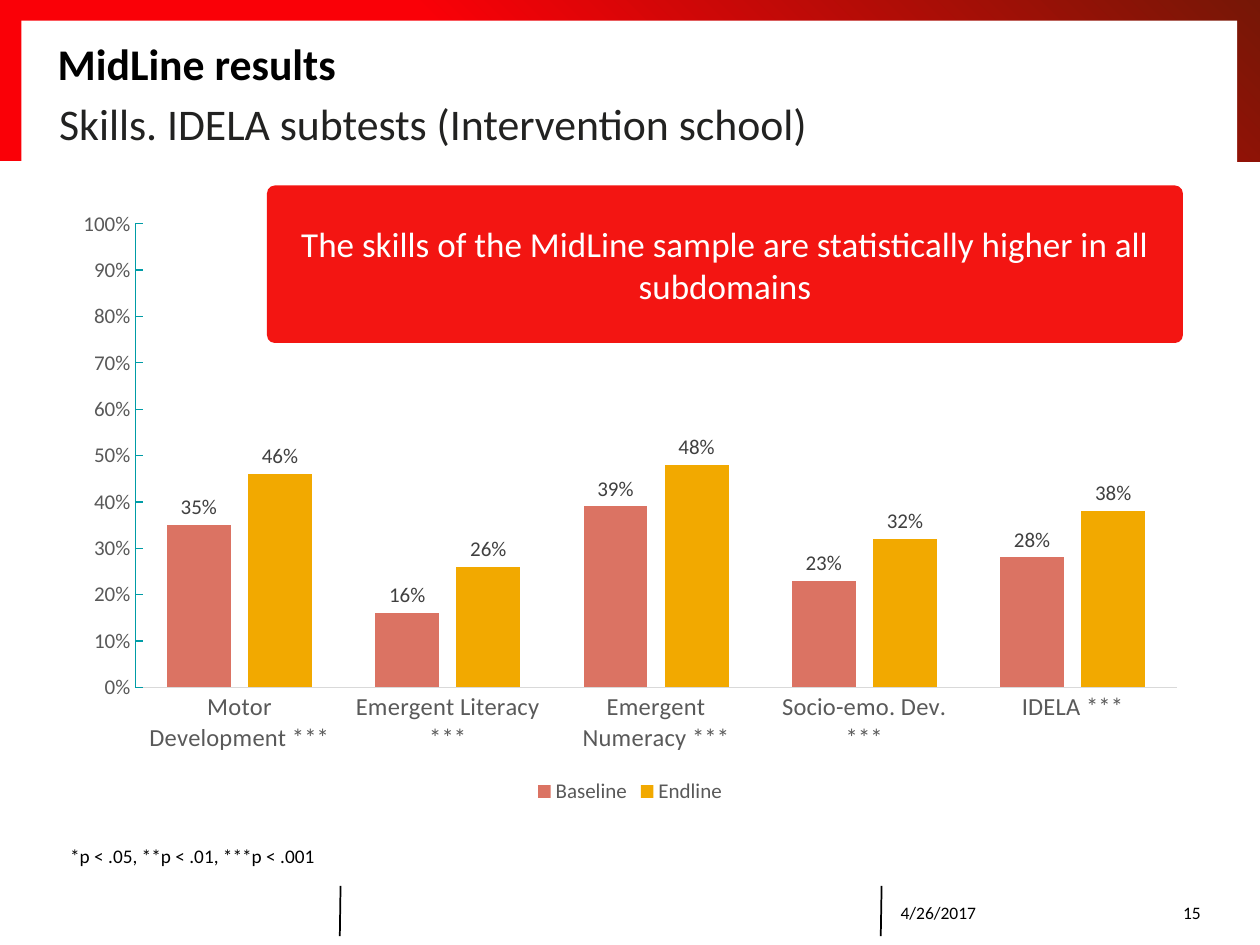
"""Build the MidLine results slide with a chart of skills by IDELA subtest."""
from dataclasses import dataclass, field
from typing import Any

from lxml.etree import SubElement
from pptx import Presentation
from pptx.chart.data import CategoryChartData
from pptx.dml.color import RGBColor
from pptx.enum.chart import XL_CHART_TYPE, XL_LABEL_POSITION, XL_LEGEND_POSITION, XL_TICK_MARK
from pptx.enum.shapes import MSO_CONNECTOR, MSO_SHAPE
from pptx.enum.text import MSO_ANCHOR, PP_ALIGN
from pptx.oxml.ns import qn
from pptx.util import Pt

FONT = "Calibri"
CATEGORIES = ["Motor Development ***", "Emergent Literacy ***", "Emergent Numeracy ***",
              "Socio-emo. Dev. ***", "IDELA ***"]


@dataclass
class Label:
    """A text box with its place, type size and format values."""
    text: str
    place: tuple[float, float, float, float]
    size: float
    color: str = "000000"
    bold: bool = False
    align: PP_ALIGN = PP_ALIGN.LEFT
    frame: dict[str, Any] = field(default_factory=dict)


@dataclass
class Bars:
    """One series of the chart."""
    name: str
    values: tuple[float, ...]
    color: str


NO_INSET = dict.fromkeys(("margin_left", "margin_top", "margin_right", "margin_bottom"), 0)
MIDDLE = {"vertical_anchor": MSO_ANCHOR.MIDDLE}
LABELS = [
    Label("MidLine results", (33, 16, 652, 40), 25, bold=True, frame=NO_INSET | MIDDLE),
    Label("4/26/2017", (507.6, 507, 124.5, 29), 10, frame=MIDDLE),
    Label("15", (632, 507, 61.2, 29), 10, align=PP_ALIGN.RIGHT, frame=MIDDLE),
    Label("Skills. IDELA subtests (Intervention school)", (33.8, 55.5, 652, 29), 25,
          "222221", frame=NO_INSET),
    Label("*p < .05, **p < .01, ***p < .001", (33, 479, 157, 21), 11,
          frame={"word_wrap": False}),
]
CALLOUT = Label("The skills of the MidLine sample are statistically higher in all subdomains",
                (152.6, 106, 523.4, 90), 20, "FFFFFF", align=PP_ALIGN.CENTER, frame=MIDDLE)
SERIES = [
    Bars("Baseline", (0.35, 0.16, 0.39, 0.23, 0.28), "DB7363"),
    Bars("Endline", (0.46, 0.26, 0.48, 0.32, 0.38), "F2A900"),
]


def rgb(code: str) -> RGBColor:
    """Turn a hex string into a colour."""
    return RGBColor.from_string(code)


def points(place: tuple[float, ...]) -> list[Pt]:
    """Turn numbers into point lengths."""
    return [Pt(value) for value in place]


def apply(target: Any, values: dict[str, Any]) -> None:
    """Set each named attribute on the target."""
    for name, value in values.items():
        setattr(target, name, value)


def style_font(font: Any, size: float, color: str, bold: bool = False) -> None:
    """Give a font its face, size, weight and colour."""
    apply(font, {"name": FONT, "size": Pt(size), "bold": bold})
    font.color.rgb = rgb(color)


def write(box: Any, label: Label) -> None:
    """Fill a box with the text of a label."""
    frame = box.text_frame
    apply(frame, {"word_wrap": True} | label.frame)
    para = frame.paragraphs[0]
    para.alignment = label.align
    span = para.add_run()
    span.text = label.text
    style_font(span.font, label.size, label.color, label.bold)


def add_panel(page: Any, kind: MSO_SHAPE, place: tuple[float, ...], color: str) -> Any:
    """Add a plain filled shape without outline or shadow."""
    panel = page.shapes.add_shape(kind, *points(place))
    panel.shadow.inherit = False
    panel.fill.solid()
    panel.fill.fore_color.rgb = rgb(color)
    panel.line.fill.background()
    return panel


def add_banner(page: Any) -> None:
    """Add the red gradient band and the white panel over it."""
    band = add_panel(page, MSO_SHAPE.RECTANGLE, (0, 0, 720, 92.2), "FA0007")
    band.fill.gradient()
    band.fill.gradient_angle = 45
    for stop, position, color in zip(band.fill.gradient_stops, (0.4, 1), ("FA0007", "761706")):
        stop.position = position
        stop.color.rgb = rgb(color)
    add_panel(page, MSO_SHAPE.RECTANGLE, (12.2, 11.8, 694.8, 85), "FFFFFF")


def add_divider(page: Any, top_x: float, bottom_x: float) -> None:
    """Add a thin black divider in the footer."""
    divider = page.shapes.add_connector(MSO_CONNECTOR.STRAIGHT,
                                        *points((top_x, 506.2, bottom_x, 535)))
    divider.line.color.rgb = rgb("000000")
    divider.line.width = Pt(1)
    SubElement(divider._element.spPr, qn("a:effectLst"))


def style_axis(axis: Any, size: float, color: str, values: dict[str, Any]) -> None:
    """Give an axis its text, line and format values."""
    apply(axis, {"has_major_gridlines": False, "minor_tick_mark": XL_TICK_MARK.NONE} | values)
    style_font(axis.tick_labels.font, size, "595959")
    axis.format.line.color.rgb = rgb(color)
    axis.format.line.width = Pt(0.75)


def add_skills_chart(page: Any) -> None:
    """Add the clustered columns of baseline and endline skills."""
    data = CategoryChartData(number_format="0%")
    data.categories = CATEGORIES
    for bars in SERIES:
        data.add_series(bars.name, bars.values)
    chart = page.shapes.add_chart(XL_CHART_TYPE.COLUMN_CLUSTERED,
                                  *points((34.6, 113.8, 650.9, 348.5)), data).chart
    style_font(chart.font, 10, "000000")
    apply(chart, {"has_title": False, "has_legend": True})
    apply(chart.legend, {"position": XL_LEGEND_POSITION.BOTTOM, "include_in_layout": False})
    style_font(chart.legend.font, 12, "595959")
    style_axis(chart.category_axis, 14, "D9D9D9", {"major_tick_mark": XL_TICK_MARK.NONE})
    style_axis(chart.value_axis, 12, "009CA6", {
        "major_tick_mark": XL_TICK_MARK.INSIDE, "minimum_scale": 0,
        "maximum_scale": 1, "major_unit": 0.1})
    apply(chart.value_axis.tick_labels, {"number_format": "0%", "number_format_is_linked": False})
    plot = chart.plots[0]
    apply(plot, {"gap_width": 99, "overlap": -27, "vary_by_categories": False})
    for series, bars in zip(plot.series, SERIES):
        series.format.fill.solid()
        series.format.fill.fore_color.rgb = rgb(bars.color)
        apply(series.data_labels, {
            "show_value": True, "number_format": "0%", "number_format_is_linked": False,
            "position": XL_LABEL_POSITION.OUTSIDE_END})
        style_font(series.data_labels.font, 12, "404040")


def main() -> None:
    """Build the slide and save the deck."""
    deck = Presentation()
    apply(deck, {"slide_width": Pt(720), "slide_height": Pt(540)})
    page = deck.slides.add_slide(deck.slide_layouts[6])
    add_banner(page)
    for top_x, bottom_x in ((194.6, 194.2), (503.8, 503.3)):
        add_divider(page, top_x, bottom_x)
    for label in LABELS:
        write(page.shapes.add_textbox(*points(label.place)), label)
    callout = add_panel(page, MSO_SHAPE.ROUNDED_RECTANGLE, CALLOUT.place, "F31512")
    callout.adjustments[0] = 0.05
    write(callout, CALLOUT)
    add_skills_chart(page)
    deck.save("out.pptx")


if __name__ == "__main__":
    main()
